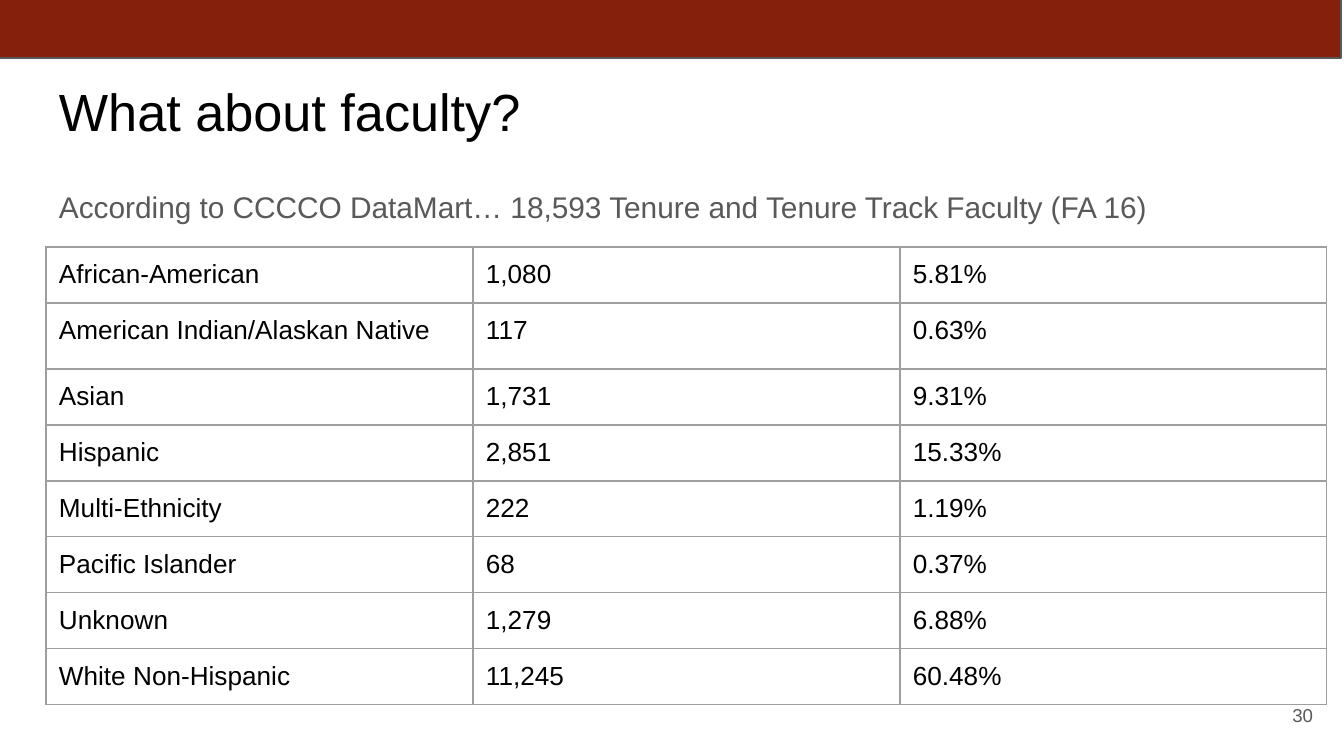
from dataclasses import dataclass

from lxml import etree
from pptx import Presentation
from pptx import util as u
from pptx.dml.color import RGBColor
from pptx.enum import shapes, text
from pptx.oxml import ns

SCALE = 914400 / 134.4


def px(length):
    return u.Emu(round(length * SCALE))


@dataclass(frozen=True)
class Theme:
    font: str = "Arial"
    ink: str = "000000"
    muted: str = "595959"
    bar: str = "85200C"
    grid: str = "9E9E9E"
    title_size: int = 28
    body_size: int = 16
    table_size: int = 14
    number_size: int = 10
    line: float = 0.75
    inset: int = 13


class SlideBuilder:
    def __init__(self, slide, theme):
        self.slide = slide
        self.theme = theme

    def fill_frame(self, frame, content, size, color,
                   align=text.PP_ALIGN.LEFT, anchor=text.MSO_ANCHOR.TOP):
        frame.text = content
        frame.word_wrap = True
        frame.auto_size = text.MSO_AUTO_SIZE.NONE
        frame.vertical_anchor = anchor
        self.set_margins(frame)
        paragraph = frame.paragraphs[0]
        paragraph.alignment = align
        self.style_runs(paragraph, size, color)
        return paragraph

    def set_margins(self, holder):
        inset = px(self.theme.inset)
        holder.margin_left = holder.margin_right = inset
        holder.margin_top = holder.margin_bottom = inset

    def style_runs(self, paragraph, size, color):
        for run in paragraph.runs:
            run.font.name = self.theme.font
            run.font.size = u.Pt(size)
            run.font.color.rgb = RGBColor.from_string(color)

    def place(self, shape, left, top, width, height):
        shape.left, shape.top = px(left), px(top)
        shape.width, shape.height = px(width), px(height)

    def bar(self, left, top, width, height):
        shape = self.slide.shapes.add_shape(
            shapes.MSO_SHAPE.RECTANGLE, px(left), px(top), px(width), px(height))
        shape.shadow.inherit = False
        shape.fill.solid()
        shape.fill.fore_color.rgb = RGBColor.from_string(self.theme.bar)
        shape.line.color.rgb = RGBColor.from_string(self.theme.muted)
        shape.line.width = u.Pt(self.theme.line)

    def title(self, content, *box):
        shape = self.slide.shapes.title
        self.place(shape, *box)
        self.fill_frame(shape.text_frame, content, self.theme.title_size, self.theme.ink)

    def body(self, content, *box):
        shape = self.slide.placeholders[1]
        self.place(shape, *box)
        paragraph = self.fill_frame(
            shape.text_frame, content, self.theme.body_size, self.theme.muted)
        properties = paragraph._p.get_or_add_pPr()
        properties.set("marL", "0")
        properties.set("indent", "0")
        etree.SubElement(properties, ns.qn("a:buNone"))
        paragraph.line_spacing = 1.15
        paragraph.space_before = u.Pt(0)
        paragraph.space_after = u.Pt(16)

    def number(self, content, left, top, width, height):
        shape = self.slide.shapes.add_textbox(px(left), px(top), px(width), px(height))
        self.fill_frame(shape.text_frame, content, self.theme.number_size,
                        self.theme.muted, text.PP_ALIGN.RIGHT, text.MSO_ANCHOR.MIDDLE)

    def table(self, rows, left, top, column_width, row_heights):
        columns = len(rows[0])
        table = self.slide.shapes.add_table(
            len(rows), columns, px(left), px(top),
            px(column_width * columns), px(sum(row_heights))).table
        table.first_row = False
        table.horz_banding = False
        for column in table.columns:
            column.width = px(column_width)
        for row, height, values in zip(table.rows, row_heights, rows):
            row.height = px(height)
            for cell, value in zip(row.cells, values):
                self.cell(cell, value)

    def cell(self, cell, value):
        cell.text = value
        self.set_margins(cell)
        self.style_runs(cell.text_frame.paragraphs[0],
                        self.theme.table_size, self.theme.ink)
        properties = cell._tc.get_or_add_tcPr()
        for edge in ("a:lnL", "a:lnR", "a:lnT", "a:lnB"):
            line = etree.SubElement(
                properties, ns.qn(edge), w=str(u.Pt(self.theme.line)))
            fill = etree.SubElement(line, ns.qn("a:solidFill"))
            etree.SubElement(fill, ns.qn("a:srgbClr"), val=self.theme.grid)
        cell.fill.background()


FACULTY = [
    ("African-American", "1,080", "5.81%"),
    ("American Indian/Alaskan Native", "117", "0.63%"),
    ("Asian", "1,731", "9.31%"),
    ("Hispanic", "2,851", "15.33%"),
    ("Multi-Ethnicity", "222", "1.19%"),
    ("Pacific Islander", "68", "0.37%"),
    ("Unknown", "1,279", "6.88%"),
    ("White Non-Hispanic", "11,245", "60.48%"),
]


def main():
    presentation = Presentation()
    presentation.slide_width, presentation.slide_height = px(1344), px(756)
    slide = presentation.slides.add_slide(presentation.slide_layouts[1])
    builder = SlideBuilder(slide, Theme())
    builder.bar(-3, -8, 1344, 66)
    builder.title("What about faculty?", 46, 66, 1252, 84)
    builder.body("According to CCCCO DataMart… 18,593 Tenure and Tenure Track Faculty (FA 16)",
                 46, 170, 1252, 502)
    builder.number("30", 1246, 686, 80, 58)
    row_heights = [66 if row == 1 else 56 for row in range(len(FACULTY))]
    builder.table(FACULTY, 46, 247, 427, row_heights)
    presentation.save("out.pptx")


if __name__ == "__main__":
    main()
